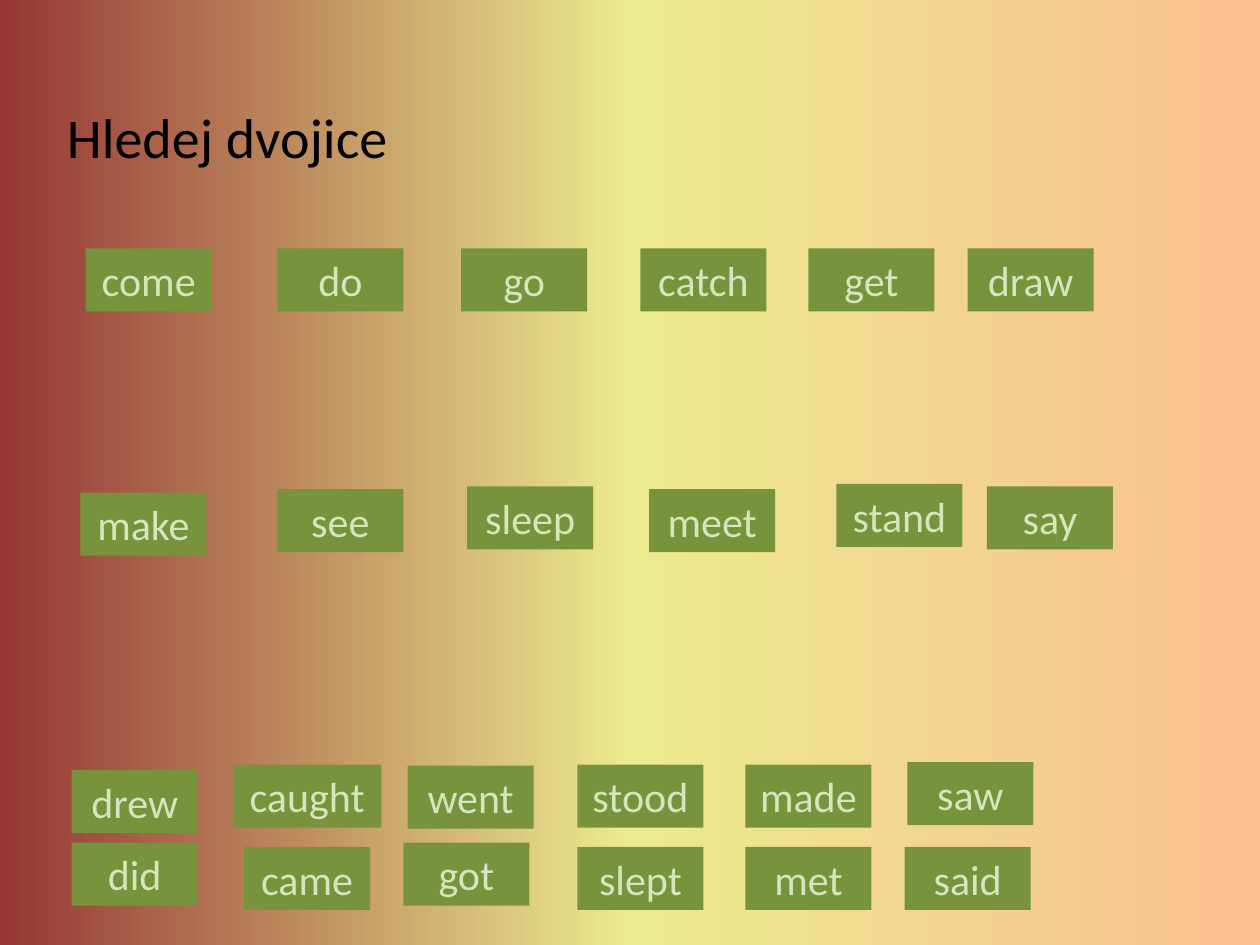
"""Build the verb-matching slide with present and past forms on cards."""
from copy import deepcopy

from pptx import Presentation
from pptx.dml.color import RGBColor
from pptx.enum.shapes import MSO_SHAPE
from pptx.enum.text import MSO_ANCHOR, PP_ALIGN
from pptx.oxml.ns import qn
from pptx.oxml.xmlchemy import OxmlElement
from pptx.util import Pt


def color(value):
    """Return the colour for a hex string."""
    return RGBColor.from_string(value)


CARD_WIDTH, CARD_HEIGHT = 72, 36
WIDE_CARDS = {"caught": 85}
BACKGROUND = [(0, "953735"), (0.5, "ECEA8E"), (1, "FAC090")]
CARDS = [
    ("come", 49, 142), ("do", 158.5, 142), ("go", 263.5, 142),
    ("catch", 366, 142), ("get", 462, 142), ("draw", 553, 142),
    ("make", 46, 281.5), ("see", 158.5, 279.5), ("sleep", 267, 278),
    ("meet", 371, 279.5), ("stand", 478, 276.5), ("say", 564, 278),
    ("drew", 41, 440), ("caught", 133, 437), ("went", 233, 437.5),
    ("stood", 330, 437), ("made", 426, 437), ("saw", 518.5, 435.5),
    ("did", 41, 481.5), ("came", 139.5, 484), ("got", 230.5, 481.5),
    ("slept", 330, 484), ("met", 426, 484), ("said", 517, 484),
]

deck = Presentation()
deck.slide_width, deck.slide_height = Pt(720), Pt(540)
page = deck.slides.add_slide(deck.slide_layouts[1])
title = page.shapes.title.element
title.getparent().remove(title)

fill = page.background.fill
fill.gradient()
fill.gradient_angle = 0
stop_list = next(page.element.iter(qn("a:gsLst")))
stop_list.append(deepcopy(stop_list[0]))
for stop, (position, shade) in zip(fill.gradient_stops, BACKGROUND):
    stop.position = position
    stop.color.rgb = color(shade)

body = page.placeholders[1]
body.left, body.top, body.width, body.height = Pt(31), Pt(55), Pt(648), Pt(363)
heading = body.text_frame.paragraphs[0]
heading.text = "Hledej dvojice"
properties = heading._p.get_or_add_pPr()
properties.set("marL", "0")
properties.set("indent", "0")
properties.append(OxmlElement("a:buNone"))
heading.space_before = Pt(0)
heading.font.name = "Calibri"
heading.font.size = Pt(32)
heading.font.color.rgb = color("000000")

for word, left, top in CARDS:
    width = WIDE_CARDS.get(word, CARD_WIDTH)
    card = page.shapes.add_shape(
        MSO_SHAPE.RECTANGLE, Pt(left), Pt(top), Pt(width), Pt(CARD_HEIGHT))
    card.shadow.inherit = False
    card.fill.solid()
    card.fill.fore_color.rgb = color("77933C")
    card.line.fill.background()
    card.text_frame.vertical_anchor = MSO_ANCHOR.MIDDLE
    label = card.text_frame.paragraphs[0]
    label.text = word
    label.alignment = PP_ALIGN.CENTER
    label.font.name = "Calibri"
    label.font.size = Pt(24)
    label.font.color.rgb = color("D7E4BD")

deck.save("out.pptx")
